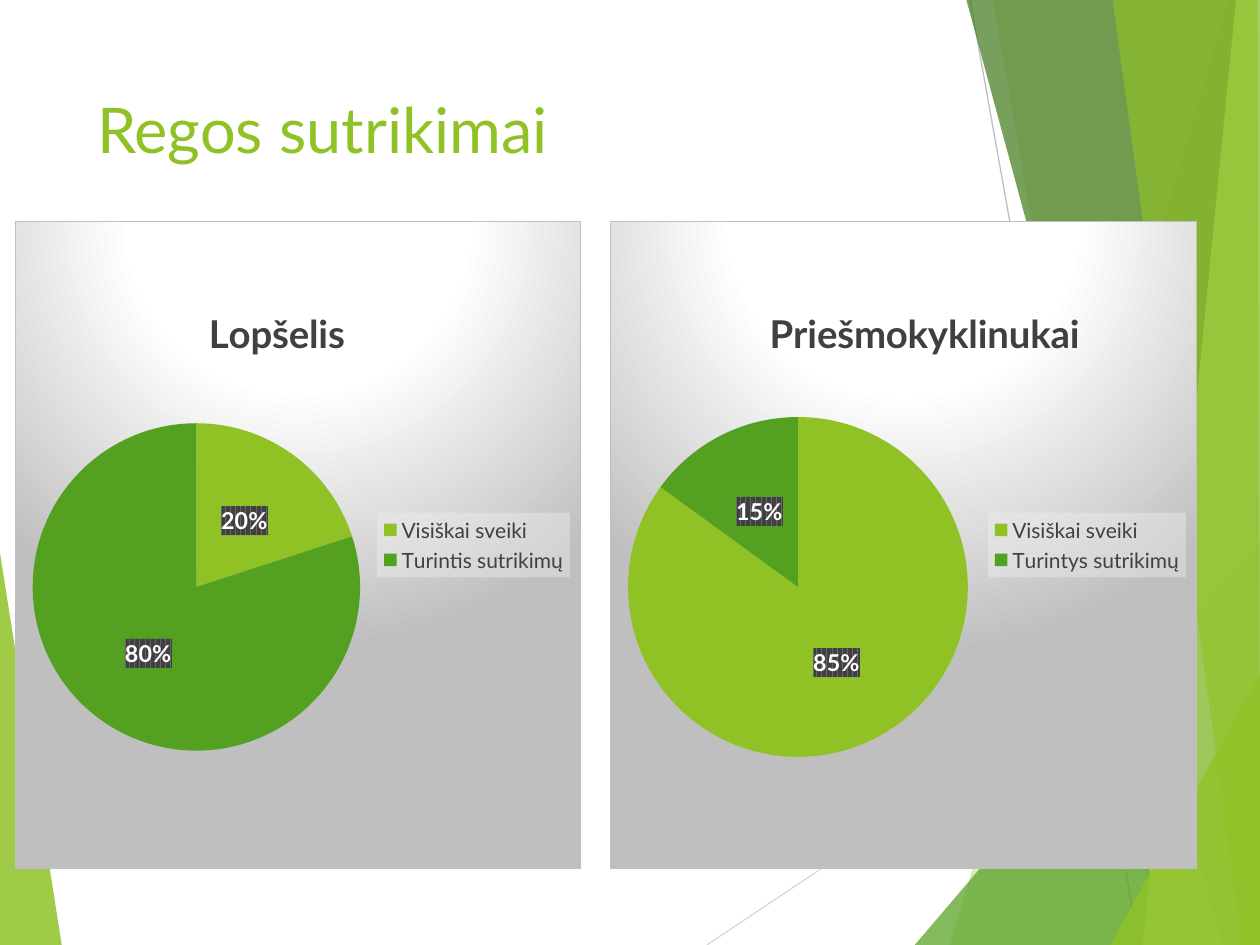
from lxml.etree import SubElement
from pptx import Presentation
from pptx.chart.data import CategoryChartData
from pptx.dml.color import RGBColor
from pptx.enum.chart import XL_CHART_TYPE as ChartType
from pptx.enum.chart import XL_LABEL_POSITION as LabelPosition
from pptx.enum.chart import XL_LEGEND_POSITION as LegendPosition
from pptx.enum.shapes import MSO_CONNECTOR as Connector
from pptx.enum.text import MSO_ANCHOR as Anchor
from pptx.enum.text import PP_ALIGN as Align
from pptx.oxml import parse_xml
from pptx.oxml.ns import nsdecls, qn
from pptx.util import Inches, Pt

LIME, GREEN, DARK = "90C226", "54A021", "404040"
FONT = "Lato"


def color(value):
    return RGBColor.from_string(value)


def set_font(font, size, value, bold=False):
    formats = {"name": FONT, "size": Pt(size), "bold": bold}
    for name, setting in formats.items():
        setattr(font, name, setting)
    font.color.rgb = color(value)


presentation = Presentation()
presentation.slide_width, presentation.slide_height = Inches(10), Inches(7.5)
slide = presentation.slides.add_slide(presentation.slide_layouts[5])

# Grid of 100 columns and 75 rows
COLUMN = presentation.slide_width // 100
ROW = presentation.slide_height // 75

# Decorative facets, back to front: fill, opacity, corners in columns and rows
left_facet = (LIME, 85, [(0, 43.9), (4.9, 75), (0, 75)])
right_facets = [
    (LIME, 30, [(97.5, 0), (75.4, 75), (100, 75), (100, 0)]),
    (LIME, 20, [(78.8, 0), (91.9, 75), (100, 75), (100, 0)]),
    (GREEN, 72, [(72.6, 75), (100, 42.9), (100, 75)]),
    ("3F7819", 70, [(76.7, 0), (97, 75), (100, 75), (100, 0)]),
    ("C0E474", 70, [(98.1, 0), (90.7, 75), (100, 75), (100, 0)]),
    (LIME, 65, [(88.3, 0), (98.6, 75), (100, 75), (99.8, 0)]),
    (LIME, 80, [(88.1, 75), (100, 53.5), (100, 75)]),
]
for fill, opacity, corners in [left_facet] + right_facets:
    points = [(column * COLUMN, row * ROW) for column, row in corners]
    builder = slide.shapes.build_freeform(*points[0])
    builder.add_line_segments(points[1:], close=True)
    shape = builder.convert_to_shape()
    shape.shadow.inherit = False
    shape.line.fill.background()
    shape.fill.solid()
    shape.fill.fore_color.rgb = color(fill)
    fill_color = shape._element.spPr.find(qn("a:solidFill"))[0]
    SubElement(fill_color, qn("a:alpha"), val=str(opacity * 1000))

# Thin lines, placed just behind the right-hand facets
thin_lines = [("D9D9D9", 56.1, 75, 100, 45.7), ("BFBFBF", 77, 0, 90.4, 75)]
first_right_facet = slide.shapes[2]._element
for line_color, x1, y1, x2, y2 in thin_lines:
    line = slide.shapes.add_connector(
        Connector.STRAIGHT, int(x1 * COLUMN), int(y1 * ROW),
        int(x2 * COLUMN), int(y2 * ROW))
    line.line.color.rgb = color(line_color)
    line.line.width = Pt(0.75)
    SubElement(line._element.spPr, qn("a:effectLst"))
    first_right_facet.addprevious(line._element)

# Title, in front of the facets
title = slide.shapes.title
title_place = {"left": 6.7 * COLUMN, "top": 6.7 * ROW,
               "width": 69.4 * COLUMN, "height": 14.4 * ROW}
for name, length in title_place.items():
    setattr(title, name, int(length))
title.text_frame.text = "Regos sutrikimai"
title.text_frame.vertical_anchor = Anchor.TOP
paragraph = title.text_frame.paragraphs[0]
paragraph.alignment = Align.LEFT
set_font(paragraph.runs[0].font, 36, LIME)
slide.shapes._spTree.append(title._element)

# Chart surfaces and layouts that python-pptx has no methods for
PANEL = f"""<c:spPr {nsdecls('c', 'a')}>
  <a:gradFill><a:gsLst>
    <a:gs pos="0"><a:srgbClr val="FFFFFF"/></a:gs>
    <a:gs pos="39000"><a:srgbClr val="FFFFFF"/></a:gs>
    <a:gs pos="100000"><a:srgbClr val="BFBFBF"/></a:gs>
  </a:gsLst><a:path path="circle">
    <a:fillToRect l="50000" t="-80000" r="50000" b="180000"/>
  </a:path></a:gradFill>
  <a:ln w="9525"><a:solidFill><a:srgbClr val="BFBFBF"/></a:solidFill></a:ln>
</c:spPr>"""
LEGEND_PANEL = f"""<c:spPr {nsdecls('c', 'a')}><a:solidFill>
  <a:srgbClr val="F2F2F2"><a:alpha val="39000"/></a:srgbClr>
</a:solidFill></c:spPr>"""
LABEL_PANEL = f"""<c:spPr {nsdecls('c', 'a')}><a:pattFill prst="dkVert">
  <a:fgClr><a:srgbClr val="404040"/></a:fgClr>
  <a:bgClr><a:srgbClr val="666666"/></a:bgClr>
</a:pattFill></c:spPr>"""
LAYOUT = f"""<c:layout {nsdecls('c')}><c:manualLayout>{{}}
</c:manualLayout></c:layout>"""

# Pie charts: left, width, title, title x and y, second category, values
pies = [
    (1.2, 44.9, "Lopšelis", 0.33, 0.12, "Turintis sutrikimų", (20, 80)),
    (48.4, 46.6, "Priešmokyklinukai", 0.26, 0.12, "Turintys sutrikimų",
     (85, 15)),
]
for left, width, name, title_x, title_y, impaired, values in pies:
    data = CategoryChartData()
    data.categories = ["Visiškai sveiki", impaired]
    data.add_series("Series 1", values)
    chart = slide.shapes.add_chart(
        ChartType.PIE, int(left * COLUMN), int(17.5 * ROW),
        int(width * COLUMN), int(51.5 * ROW), data).chart
    set_font(chart.font, 10, "000000")
    chart_space = chart._chartSpace
    chart_space.find(qn("c:chart")).addnext(parse_xml(PANEL))

    # Heading
    chart.has_title = True
    heading = chart.chart_title
    heading.text_frame.text = name
    set_font(heading.text_frame.paragraphs[0].runs[0].font, 22, DARK, True)
    heading.include_in_layout = True
    heading_element = heading._element
    for old_layout in heading_element.findall(qn("c:layout")):
        heading_element.remove(old_layout)
    place = (f'<c:xMode val="edge"/><c:yMode val="edge"/>'
             f'<c:x val="{title_x}"/><c:y val="{title_y}"/>')
    heading_element.find(qn("c:tx")).addnext(parse_xml(LAYOUT.format(place)))

    # Plot area
    plot_area = chart_space.find(".//" + qn("c:plotArea"))
    for old_layout in plot_area.findall(qn("c:layout")):
        plot_area.remove(old_layout)
    place = ('<c:layoutTarget val="inner"/>'
             '<c:xMode val="edge"/><c:yMode val="edge"/>'
             '<c:x val="0.03"/><c:y val="0.3"/>'
             '<c:w val="0.58"/><c:h val="0.53"/>')
    plot_area.insert(0, parse_xml(LAYOUT.format(place)))

    # Legend
    chart.has_legend = True
    chart.legend.position = LegendPosition.RIGHT
    chart.legend.include_in_layout = False
    set_font(chart.legend.font, 12, DARK)
    legend_text = chart.legend._element.find(qn("c:txPr"))
    legend_text.addprevious(parse_xml(LEGEND_PANEL))

    # Slices and percentages
    plot = chart.plots[0]
    plot.vary_by_categories = True
    for index, fill in enumerate((LIME, GREEN)):
        slice_fill = plot.series[0].points[index].format.fill
        slice_fill.solid()
        slice_fill.fore_color.rgb = color(fill)
    labels = plot.series[0].data_labels
    label_formats = {"show_percentage": True, "show_value": False,
                     "number_format": "0%", "number_format_is_linked": False,
                     "position": LabelPosition.CENTER}
    for setting, value in label_formats.items():
        setattr(labels, setting, value)
    set_font(labels.font, 13.3, "FFFFFF", True)
    label_text = labels._element.find(qn("c:txPr"))
    label_text.addprevious(parse_xml(LABEL_PANEL))

presentation.save("out.pptx")
